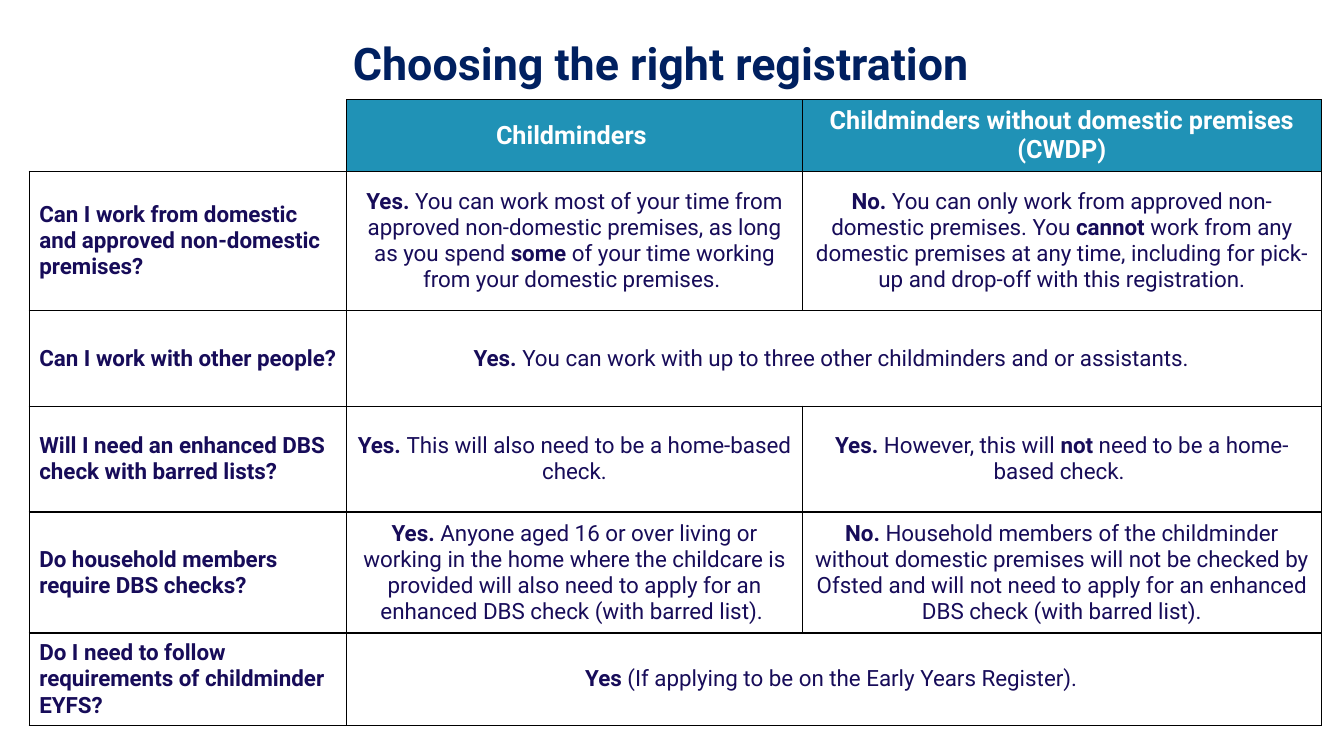
from dataclasses import dataclass

from lxml.etree import SubElement
from pptx import Presentation
from pptx.dml.color import RGBColor
from pptx.enum.text import MSO_ANCHOR as Anchor, PP_ALIGN as Align
from pptx.oxml.ns import qn
from pptx.table import _Cell as Cell
from pptx.text.text import _Paragraph as Paragraph
from pptx.util import Pt

NAVY = RGBColor(0x00, 0x20, 0x60)
INDIGO = RGBColor(0x17, 0x0C, 0x59)
TEAL = RGBColor(0x20, 0x92, 0xB6)
WHITE = RGBColor(0xFF, 0xFF, 0xFF)
BLACK = RGBColor(0x00, 0x00, 0x00)
FONT = "Roboto"
COLUMN_WIDTHS = (226.8, 325.4, 370.8)
HEADER_HEIGHT = 51.1
HEADINGS = ("Childminders ", "Childminders without domestic premises (CWDP)")


@dataclass(frozen=True)
class Topic:
    height: float
    question: str
    answers: tuple[str, ...]


# Asterisks enclose bold words; a single answer spans both registrations.
TOPICS = (
    Topic(99.4, "Can I work from domestic and approved non-domestic premises?", (
        "*Yes. *You can work most of your time from approved non-domestic premises, "
        "as long as you spend *some* of your time working from your domestic premises. ",
        "*No. *You can only work from approved non-domestic premises. You *cannot *work "
        "from any domestic premises at any time, including for pick-up and drop-off "
        "with this registration.")),
    Topic(68.4, "Can I work with other people?", (
        "*Yes. *You can work with up to three other childminders and or assistants. ",)),
    Topic(75.6, "Will I need an enhanced DBS check with barred lists?", (
        "*Yes. *This will also need to be a home-based check.",
        "*Yes. *However, this will *not* need to be a home-based check. ")),
    Topic(86.4, "Do household members require DBS checks?", (
        "*Yes. *Anyone aged 16 or over living or working in the home where the childcare "
        "is provided will also need to apply for an enhanced DBS check (with barred list). ",
        "*No. *Household members of the childminder without domestic premises will not be "
        "checked by Ofsted and will not need to apply for an enhanced DBS check "
        "(with barred list).")),
    Topic(66.2, "Do I need to follow requirements of childminder EYFS?", (
        "*Yes *(If applying to be on the Early Years Register). ",)),
)


def write(paragraph: Paragraph, text: str, size: float, color: RGBColor, align: Align) -> None:
    paragraph.alignment = align
    for index, part in enumerate(text.split("*")):
        if part:
            run = paragraph.add_run()
            run.text = part
            run.font.name = FONT
            run.font.size = Pt(size)
            run.font.bold = index % 2 == 1
            run.font.color.rgb = color


def draw_borders(cell: Cell, sides: str = "LRTB") -> None:
    properties = cell._tc.get_or_add_tcPr()
    for side in sides:
        line = SubElement(properties, qn(f"a:ln{side}"), w=str(Pt(1)))
        fill = SubElement(line, qn("a:solidFill"))
        SubElement(fill, qn("a:srgbClr"), val=str(BLACK))


def fill_cell(cell: Cell, text: str, size: float, color: RGBColor, align: Align) -> None:
    cell.vertical_anchor = Anchor.MIDDLE
    write(cell.text_frame.paragraphs[0], text, size, color, align)


def main() -> None:
    deck = Presentation()
    deck.slide_width, deck.slide_height = Pt(960), Pt(540)
    slide = deck.slides.add_slide(deck.slide_layouts[5])

    title = slide.shapes.title
    title.left, title.top, title.width, title.height = Pt(244.8), Pt(21.6), Pt(586), Pt(46)
    title.text_frame.vertical_anchor = Anchor.TOP
    write(title.text_frame.paragraphs[0], "*Choosing the right registration*", 32, NAVY, Align.LEFT)

    heights = [HEADER_HEIGHT] + [topic.height for topic in TOPICS]
    comparison = slide.shapes.add_table(
        len(heights), len(COLUMN_WIDTHS), Pt(20.9), Pt(71.3),
        Pt(sum(COLUMN_WIDTHS)), Pt(sum(heights))).table
    comparison.first_row = comparison.horz_banding = False
    for column, width in zip(comparison.columns, COLUMN_WIDTHS):
        column.width = Pt(width)
    for row, height in zip(comparison.rows, heights):
        row.height = Pt(height)

    corner = comparison.cell(0, 0)
    for cell in comparison.iter_cells():
        draw_borders(cell, "RB" if cell == corner else "LRTB")
        cell.fill.background()

    for column, heading in enumerate(HEADINGS, 1):
        cell = comparison.cell(0, column)
        cell.fill.solid()
        cell.fill.fore_color.rgb = TEAL
        fill_cell(cell, f"*{heading}*", 18, WHITE, Align.CENTER)

    for row, topic in enumerate(TOPICS, 1):
        fill_cell(comparison.cell(row, 0), f"*{topic.question}*", 16, INDIGO, Align.LEFT)
        if len(topic.answers) == 1:
            comparison.cell(row, 1).merge(comparison.cell(row, 2))
        for column, answer in enumerate(topic.answers, 1):
            fill_cell(comparison.cell(row, column), answer, 16, INDIGO, Align.CENTER)

    deck.save("out.pptx")


if __name__ == "__main__":
    main()
